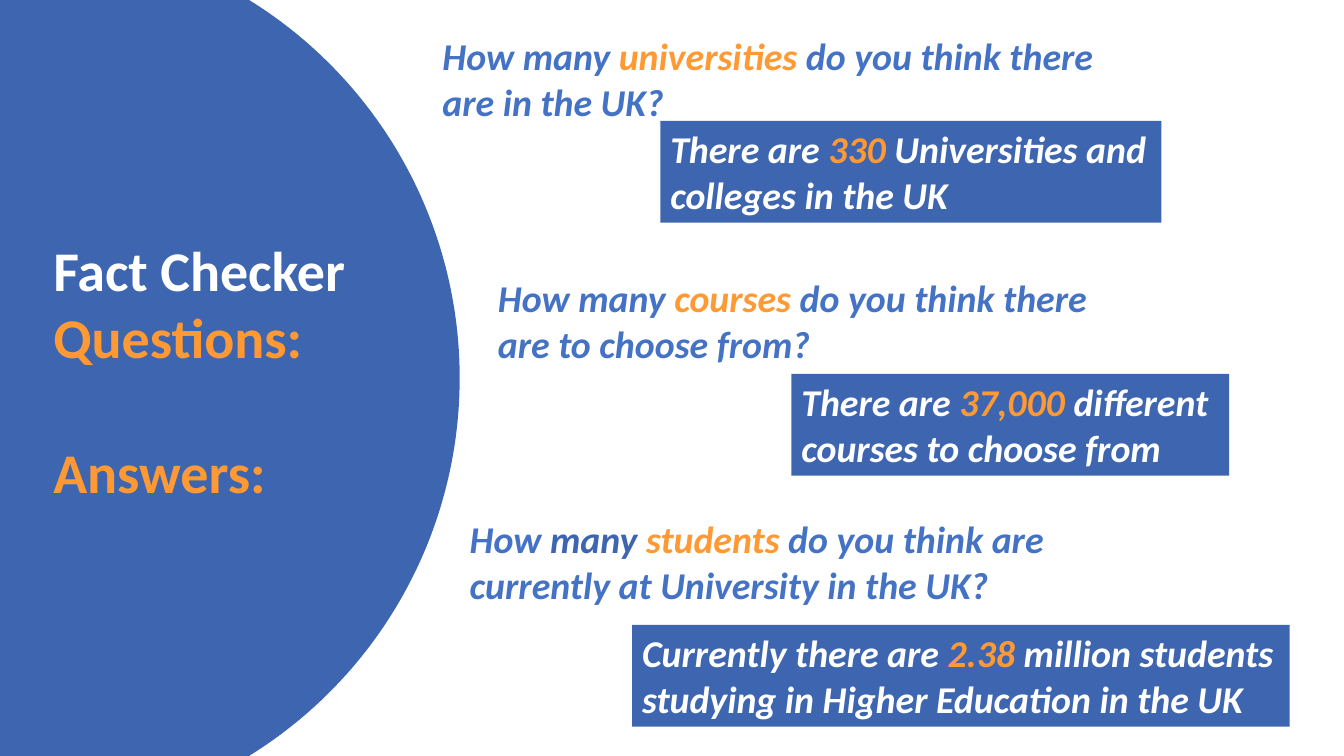
import math
import pptx
import pptx.util
import pptx.dml.color
import pptx.enum.shapes
import pptx.enum.text

RGBColor = pptx.dml.color.RGBColor
BLUE = RGBColor(0x3E, 0x66, 0xB0)
LIGHT_BLUE = RGBColor(0x44, 0x72, 0xC4)
ORANGE = RGBColor(0xFF, 0x99, 0x33)
WHITE = RGBColor(0xFF, 0xFF, 0xFF)

# Content: each paragraph is a list of (text, colour) runs
HEADING = [
    [("Fact Checker", WHITE)],
    [("Questions:", ORANGE)],
    [("Answers:", ORANGE)],
]
# (left, top, width, runs)
QUESTIONS = [
    (4.29, 0.28, 7.24, [("How many ", LIGHT_BLUE), ("universities", ORANGE),
                        (" do you think there are in the UK?", LIGHT_BLUE)]),
    (4.84, 2.68, 6.59, [("How many ", LIGHT_BLUE), ("courses", ORANGE),
                        (" do you think there are to choose from?", LIGHT_BLUE)]),
    (4.56, 5.07, 6.59, [("How ", LIGHT_BLUE), ("many", BLUE), (" students ", ORANGE),
                        ("do you think are currently at University in the UK?", LIGHT_BLUE)]),
]
ANSWERS = [
    (6.55, 1.2, 4.97, [("There are ", WHITE), ("330 ", ORANGE),
                       ("Universities and colleges in the UK", WHITE)]),
    (7.85, 3.71, 4.34, [("There are ", WHITE), ("37,000 ", ORANGE),
                        ("different courses to choose from", WHITE)]),
    (6.27, 6.2, 6.52, [("Currently there are ", WHITE), ("2.38 ", ORANGE),
                       ("million students studying in Higher Education in the UK", WHITE)]),
]

# Layout in inches
SLIDE_WIDTH, SLIDE_HEIGHT = 13.33, 7.5
FACT_HEIGHT = 1.01
ARC_CENTRE, ARC_RADIUS, ARC_STEPS = 0.15, 4.41, 120

presentation = pptx.Presentation()
presentation.slide_width = pptx.util.Inches(SLIDE_WIDTH)
presentation.slide_height = pptx.util.Inches(SLIDE_HEIGHT)
slide = presentation.slides.add_slide(presentation.slide_layouts[6])


def add_text(paragraphs, left, top, width, height, size=27, italic=True, fill=None, last_gap=0):
    """Add bold text, on a filled rectangle if a fill is given."""
    box = [pptx.util.Inches(length) for length in (left, top, width, height)]
    if fill is None:
        shape = slide.shapes.add_textbox(*box)
    else:
        shape = slide.shapes.add_shape(pptx.enum.shapes.MSO_SHAPE.RECTANGLE, *box)
        paint(shape, fill)
    frame = shape.text_frame
    frame.word_wrap = True
    frame.auto_size = pptx.enum.text.MSO_AUTO_SIZE.SHAPE_TO_FIT_TEXT
    frame.vertical_anchor = pptx.enum.text.MSO_ANCHOR.TOP
    for index, runs in enumerate(paragraphs):
        paragraph = frame.add_paragraph() if index else frame.paragraphs[0]
        paragraph.alignment = pptx.enum.text.PP_ALIGN.LEFT
        if last_gap and index == len(paragraphs) - 1:
            paragraph.space_before = pptx.util.Pt(last_gap)
        for text, colour in runs:
            run = paragraph.add_run()
            run.text = text
            run.font.name = "Calibri"
            run.font.size = pptx.util.Pt(size)
            run.font.bold = True
            run.font.italic = italic
            run.font.color.rgb = colour


def paint(shape, colour):
    shape.shadow.inherit = False
    shape.fill.solid()
    shape.fill.fore_color.rgb = colour
    shape.line.fill.background()


# Blue panel: a circle cut off by the slide's left, top and bottom edges
middle = SLIDE_HEIGHT / 2
half_angle = math.asin(middle / ARC_RADIUS)
angles = [half_angle * (2 * step / ARC_STEPS - 1) for step in range(ARC_STEPS + 1)]
arc = [(ARC_CENTRE + ARC_RADIUS * math.cos(angle), middle + ARC_RADIUS * math.sin(angle))
       for angle in angles]
outline = [(pptx.util.Inches(x), pptx.util.Inches(y)) for x, y in arc + [(0, SLIDE_HEIGHT)]]
builder = slide.shapes.build_freeform(0, 0)
builder.add_line_segments(outline, close=True)
paint(builder.convert_to_shape(), BLUE)

# Heading on the panel
add_text(HEADING, 0.43, 2.29, 3.71, 2.79, size=40, italic=False, last_gap=48)

# Questions, then answers
for facts, fill in ((QUESTIONS, None), (ANSWERS, BLUE)):
    for left, top, width, runs in facts:
        add_text([runs], left, top, width, FACT_HEIGHT, fill=fill)

presentation.save("out.pptx")
